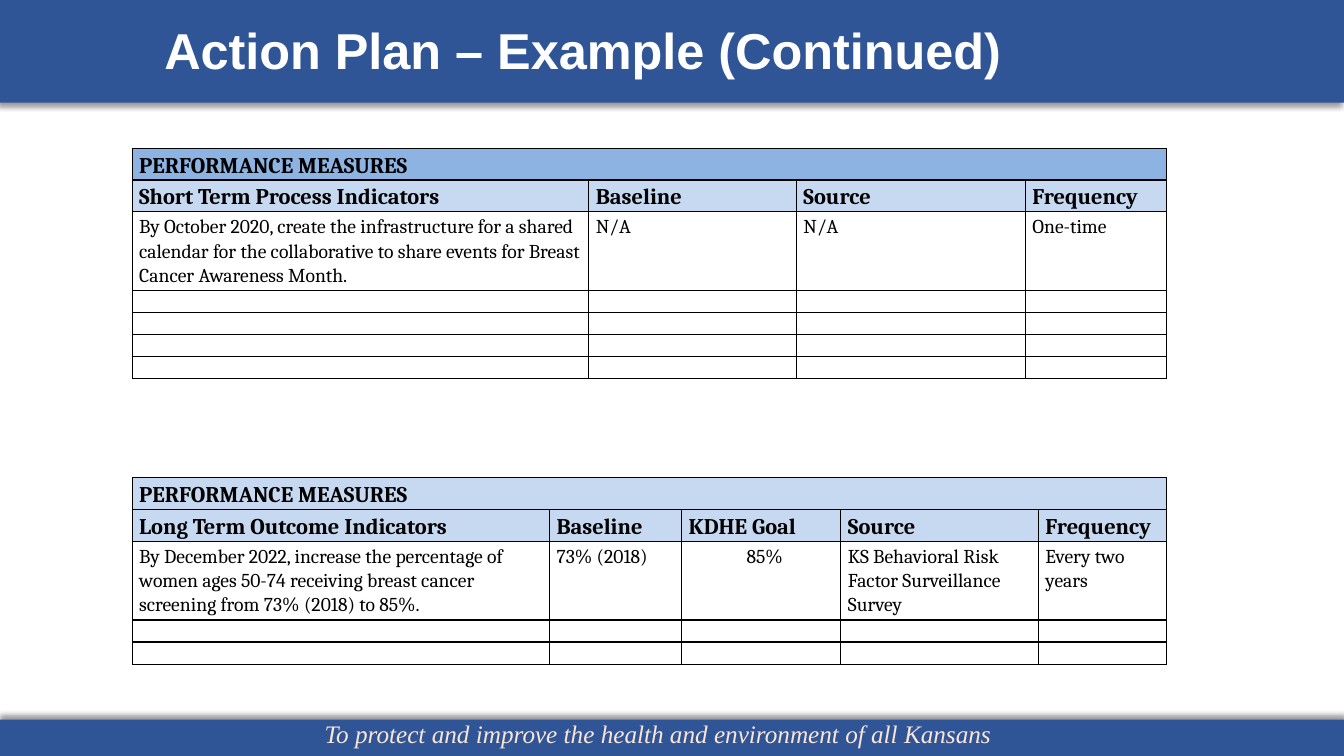
import lxml.etree
import pptx
import pptx.dml.color
import pptx.enum.shapes
import pptx.enum.text
import pptx.oxml.ns
import pptx.util

WIDE = pptx.util.Inches(13.33)
HIGH = pptx.util.Inches(7.5)
HUES = {
    "bar": "2F5597",
    "motto": "FBE5D6",
    "title": "FFFFFF",
    "ink": "000000",
    "band": "8DB3E2",
    "head": "C6D9F1",
}
HEAD = {"size": pptx.util.Pt(16), "name": "Cambria", "bold": True}
BODY = {"size": pptx.util.Pt(14), "name": "Cambria", "bold": False}
LEFT = 9.83
TALL, BASE, THIN = 4.13, 10, 2.93


def across(share):
    return round(WIDE * share / 100)


def down(share):
    return round(HIGH * share / 100)


def place(left, top, width, height):
    return across(left), down(top), across(width), down(height)


def tint(hue):
    return pptx.dml.color.RGBColor.from_string(HUES[hue])


def apply(item, form):
    for name, value in form.items():
        setattr(item, name, value)


def node(root, tag, **attrs):
    return lxml.etree.SubElement(root, pptx.oxml.ns.qn(tag), attrs)


def write(frame, words, form, hue):
    line = frame.paragraphs[0]
    run = line.add_run()
    run.text = words
    apply(run.font, form)
    run.font.color.rgb = tint(hue)
    return line


def add_bar(slide, top, height, angle):
    kind = pptx.enum.shapes.MSO_SHAPE.RECTANGLE
    bar = slide.shapes.add_shape(kind, *place(0, top, 100, height))
    bar.fill.solid()
    bar.fill.fore_color.rgb = tint("bar")
    bar.line.fill.background()
    bar.shadow.inherit = False
    glow = bar._element.spPr.find(pptx.oxml.ns.qn("a:effectLst"))
    shade = node(glow, "a:outerShdw", blurRad=str(pptx.util.Pt(4)),
                 dist=str(pptx.util.Pt(3)), dir=str(angle * 60000),
                 algn="t", rotWithShape="0")
    tone = node(shade, "a:srgbClr", val=HUES["ink"])
    node(tone, "a:alpha", val="40000")


def add_text(slide, spot, words, form, hue, frame):
    box = slide.shapes.add_textbox(*place(*spot))
    apply(box.text_frame, {"word_wrap": True, **frame})
    write(box.text_frame, words, form, hue)


def edge(cell, sides):
    props = cell._tc.get_or_add_tcPr()
    for side in "LRTB":
        line = node(props, "a:ln" + side, w=str(pptx.util.Pt(1)))
        if side in sides:
            fill = node(line, "a:solidFill")
            node(fill, "a:srgbClr", val=HUES["ink"])
        else:
            node(line, "a:noFill")


def fill_cell(cell, words, form, hue, right):
    inch = pptx.util.Inches
    apply(cell, {"margin_left": inch(0.07), "margin_right": inch(right),
                 "margin_top": inch(0.03 if words else 0), "margin_bottom": 0})
    if hue:
        cell.fill.solid()
        cell.fill.fore_color.rgb = tint(hue)
    else:
        cell.fill.background()
    if words:
        line = write(cell.text_frame, words, form, "ink")
        line.line_spacing = 1.07
        if words == "85%":
            line.alignment = pptx.enum.text.PP_ALIGN.CENTER
    else:
        node(cell.text_frame.paragraphs[0]._p, "a:endParaRPr", sz="1000")


def add_grid(slide, top, cols, data, spare, hue, right):
    count = len(cols)
    lines = [["PERFORMANCE MEASURES"] + [""] * (count - 1), *data]
    lines += [[""] * count for _ in range(spare)]
    rows = [TALL, TALL, BASE] + [THIN] * spare
    spot = place(LEFT, top, sum(cols), sum(rows))
    grid = slide.shapes.add_table(len(rows), count, *spot).table
    apply(grid, {"first_row": False, "horz_banding": False})
    for col, share in zip(grid.columns, cols):
        col.width = across(share)
    for row, share in zip(grid.rows, rows):
        row.height = down(share)
    fills = [hue, "head"]
    for r, line in enumerate(lines):
        for c, words in enumerate(line):
            cell = grid.cell(r, c)
            sides = "LRTB"
            if r == 0:
                sides = "TB" + "L" * (c == 0) + "R" * (c == count - 1)
            edge(cell, sides)
            form = HEAD if r < 2 else BODY
            fill_cell(cell, words, form, fills[r] if r < 2 else None, right)
    return grid


def main():
    deck = pptx.Presentation()
    apply(deck, {"slide_width": WIDE, "slide_height": HIGH})
    slide = deck.slides.add_slide(deck.slide_layouts[6])
    add_bar(slide, -0.13, 13.73, 135)
    add_bar(slide, 95.2, 4.93, 270)
    add_text(slide, (23.41, 94.4, 53.04, 5.33),
             "To protect and improve the health and environment of all Kansans",
             {"size": pptx.util.Pt(18), "name": "Times New Roman",
              "italic": True}, "motto",
             {"auto_size": pptx.enum.text.MSO_AUTO_SIZE.SHAPE_TO_FIT_TEXT})
    pad = pptx.util.Inches(0.25)
    add_text(slide, (10.35, 2.53, 89.42, 8), "Action Plan – Example (Continued)",
             {"size": pptx.util.Pt(36), "name": "Arial", "bold": True}, "title",
             {"vertical_anchor": pptx.enum.text.MSO_ANCHOR.MIDDLE,
              "margin_left": pad, "margin_right": pad,
              "margin_top": pad, "margin_bottom": pad})
    add_grid(slide, 19.6, [33.98, 15.45, 17.03, 10.5], [
        ["Short Term Process Indicators", "Baseline", "Source", "Frequency"],
        ["By October 2020, create the infrastructure for a shared calendar "
         "for the collaborative to share events for Breast Cancer Awareness "
         "Month.", "N/A", "N/A", "One-time"],
    ], 4, "band", 0.08)
    goals = add_grid(slide, 63.2, [31.06, 9.83, 11.85, 14.7, 9.53], [
        ["Long Term Outcome Indicators", "Baseline", "KDHE Goal", "Source",
         "Frequency"],
        ["By December 2022, increase the percentage of women ages 50-74 "
         "receiving breast cancer screening from 73% (2018) to 85%.",
         "73% (2018)", "85%", "KS Behavioral Risk Factor Surveillance Survey",
         "Every two years"],
    ], 2, "head", 0)
    goals.cell(0, 1).merge(goals.cell(0, 2))
    deck.save("out.pptx")


if __name__ == "__main__":
    main()
